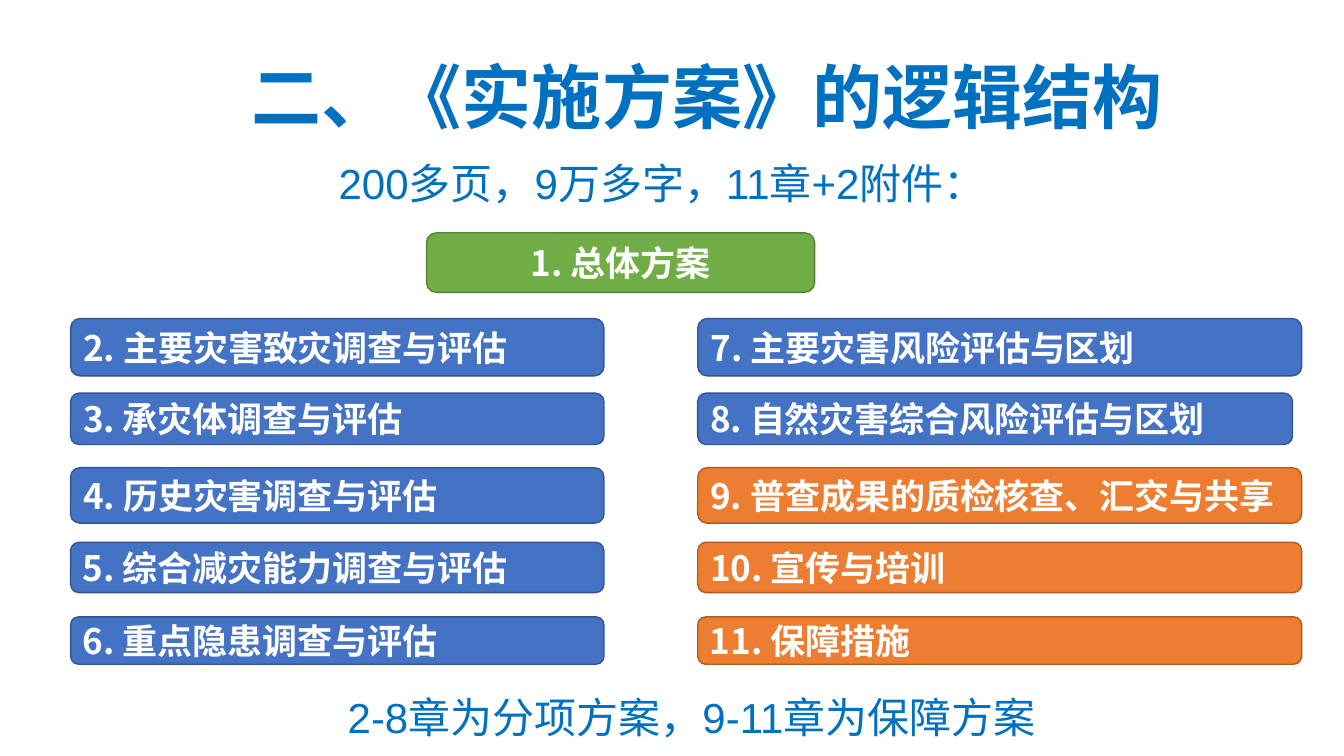
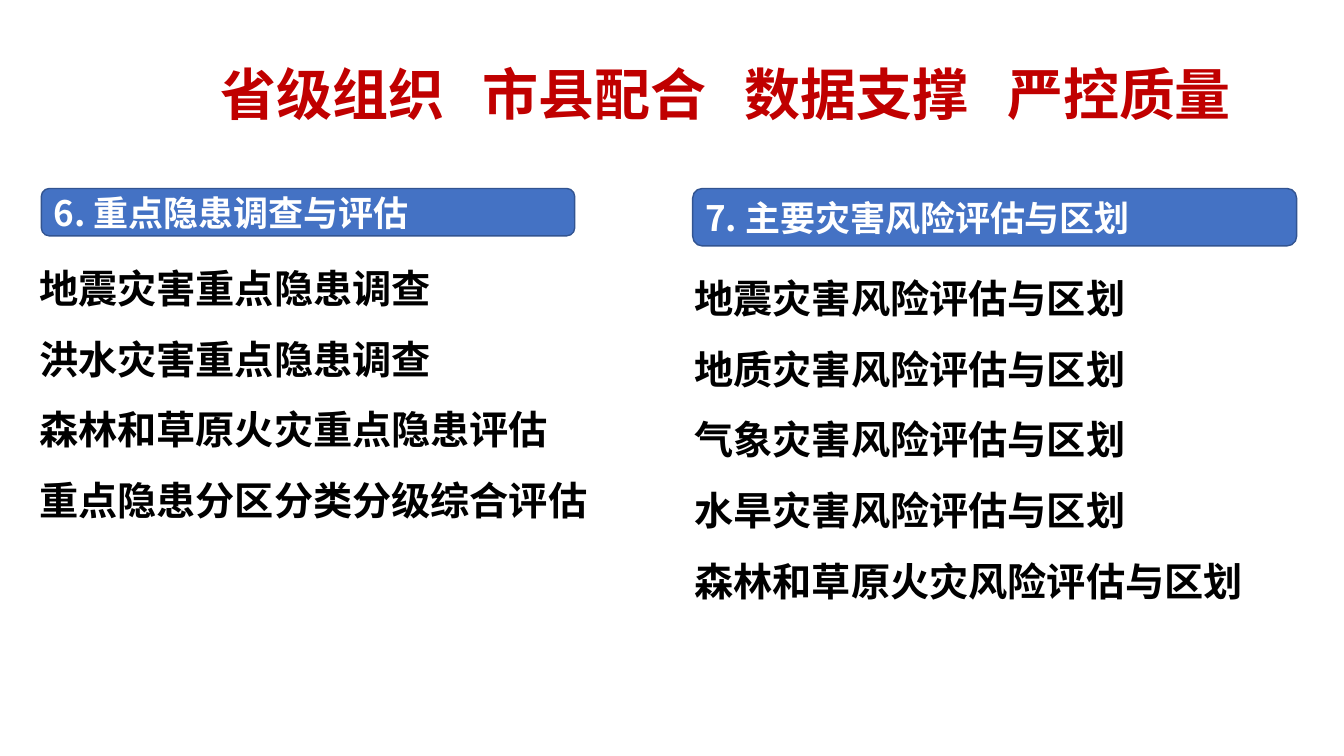
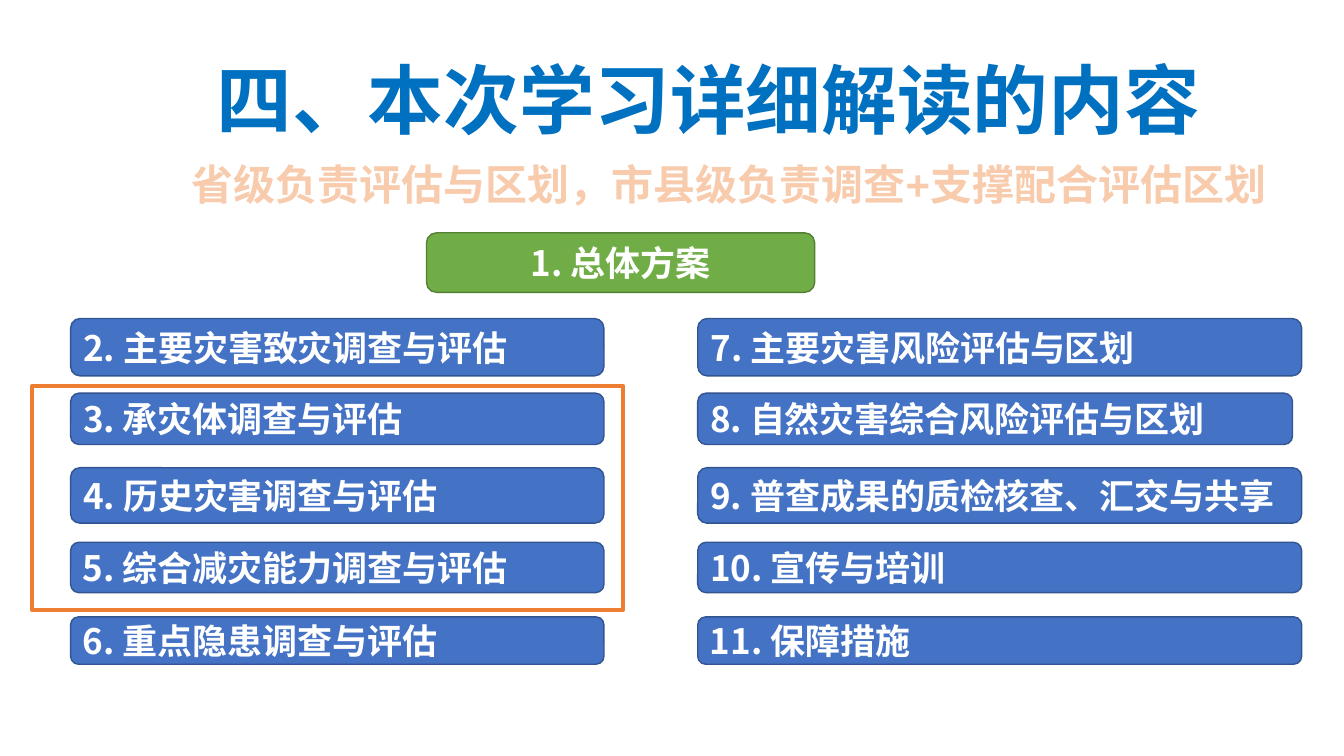
from pptx import Presentation
from pptx.dml.color import RGBColor
from pptx.enum.shapes import MSO_SHAPE
from pptx.enum.text import MSO_ANCHOR, PP_ALIGN
from pptx.oxml.ns import qn
from pptx.util import Inches, Pt
from lxml.etree import SubElement

WHITE = RGBColor(0xFF, 0xFF, 0xFF)
BLACK = RGBColor(0x00, 0x00, 0x00)
TITLE_BLUE = RGBColor(0x00, 0x70, 0xC0)
TITLE_RED = RGBColor(0xC0, 0x00, 0x00)
PEACH = RGBColor(0xF8, 0xCB, 0xAD)
ORANGE = RGBColor(0xED, 0x7D, 0x31)
# Fill and line of each kind of bar
GREEN_BAR = (RGBColor(0x70, 0xAD, 0x47), RGBColor(0x53, 0x80, 0x35))
BLUE_BAR = (RGBColor(0x44, 0x72, 0xC4), RGBColor(0x32, 0x54, 0x91))
ORANGE_BAR = (ORANGE, RGBColor(0xAF, 0x5C, 0x24))

LATIN_FONT, CHINESE_FONT = "Arial", "Noto Sans CJK SC"

OVERALL_PLAN = "1. 总体方案"
SURVEY_CHAPTERS = [
    "2. 主要灾害致灾调查与评估",
    "3. 承灾体调查与评估",
    "4. 历史灾害调查与评估",
    "5. 综合减灾能力调查与评估",
    "6. 重点隐患调查与评估",
]
RISK_CHAPTERS = [
    "7. 主要灾害风险评估与区划",
    "8. 自然灾害综合风险评估与区划",
    "9. 普查成果的质检核查、汇交与共享",
    "10. 宣传与培训",
    "11. 保障措施",
]
HAZARD_SURVEYS = [
    "地震灾害重点隐患调查",
    "洪水灾害重点隐患调查",
    "森林和草原火灾重点隐患评估",
    "重点隐患分区分类分级综合评估",
]
RISK_ASSESSMENTS = [
    "地震灾害风险评估与区划",
    "地质灾害风险评估与区划",
    "气象灾害风险评估与区划",
    "水旱灾害风险评估与区划",
    "森林和草原火灾风险评估与区划",
]
SLOGANS = ["省级组织", "市县配合", "数据支撑", "严控质量"]
SLOGAN_PITCH = 2.6

FIRST_ROW, ROW_PITCH = 3.16, 0.74
ROW_HEIGHTS = [0.57, 0.51, 0.55, 0.5, 0.47]
SURVEY_LEFT, SURVEY_WIDTHS = 0.7, [5.29] * 5
RISK_LEFT, RISK_WIDTHS = 6.92, [5.99, 5.9, 5.99, 5.99, 5.99]


def add_span(para, text, size, color, bold, latin=LATIN_FONT):
    span = para.add_run()
    span.text = text
    for name, value in {"size": Pt(size), "bold": bold, "name": latin}.items():
        setattr(span.font, name, value)
    span.font.color.rgb = color
    SubElement(span.font._element, qn("a:ea"), typeface=CHINESE_FONT)
    return span


def add_text(page, place, lines, size, color, bold=False, spacing=None):
    box = page.shapes.add_textbox(*map(Inches, place))
    frame = box.text_frame
    frame.word_wrap = True
    for index, line in enumerate(lines):
        para = frame.add_paragraph() if index else frame.paragraphs[0]
        para.line_spacing = spacing
        add_span(para, line, size, color, bold)
    return frame.paragraphs[0]


def add_bar(page, place, text, colors, align=PP_ALIGN.LEFT):
    bar = page.shapes.add_shape(MSO_SHAPE.ROUNDED_RECTANGLE, *map(Inches, place))
    bar.shadow.inherit = False
    bar.fill.solid()
    bar.fill.fore_color.rgb, bar.line.color.rgb = colors
    bar.line.width = Pt(1)
    frame = bar.text_frame
    frame.word_wrap = True
    frame.vertical_anchor = MSO_ANCHOR.MIDDLE
    frame.paragraphs[0].alignment = align
    add_span(frame.paragraphs[0], text, 25, WHITE, True, CHINESE_FONT)


def add_column(page, left, widths, chapters, colors):
    for row, (text, width, height, pair) in enumerate(
            zip(chapters, widths, ROW_HEIGHTS, colors)):
        add_bar(page, (left, FIRST_ROW + row * ROW_PITCH, width, height), text, pair)


def add_chapter_map(page, risk_colors):
    """Overall plan on top, the other ten chapters in two columns below."""
    add_bar(page, (4.23, 2.31, 3.85, 0.59), OVERALL_PLAN, GREEN_BAR, PP_ALIGN.CENTER)
    add_column(page, SURVEY_LEFT, SURVEY_WIDTHS, SURVEY_CHAPTERS, [BLUE_BAR] * 5)
    add_column(page, RISK_LEFT, RISK_WIDTHS, RISK_CHAPTERS, risk_colors)


def outline_text(para, color, width):
    properties = para.runs[0].font._element
    line = SubElement(properties, qn("a:ln"), w=str(Pt(width)))
    fill = SubElement(line, qn("a:solidFill"))
    SubElement(fill, qn("a:srgbClr"), val=str(color))
    properties.insert(0, line)


def set_tabs(para, stops):
    tabs = SubElement(para._p.get_or_add_pPr(), qn("a:tabLst"))
    for stop in stops:
        SubElement(tabs, qn("a:tab"), pos=str(Inches(stop)), algn="l")


def build_structure(page):
    add_text(page, (2.4, 0.48, 9.32, 0.94), ["二、《实施方案》的逻辑结构"],
             50, TITLE_BLUE, True)
    add_text(page, (3.26, 1.51, 7.54, 0.61), ["200多页，9万多字，11章+2附件："],
             30, TITLE_BLUE)
    add_chapter_map(page, [BLUE_BAR] * 2 + [ORANGE_BAR] * 3)
    add_text(page, (3.35, 6.81, 7.54, 0.61), ["2-8章为分项方案，9-11章为保障方案"],
             30, TITLE_BLUE)


def build_division(page):
    add_bar(page, (0.41, 1.87, 5.29, 0.47), SURVEY_CHAPTERS[-1], BLUE_BAR)
    add_text(page, (0.29, 2.34, 5.96, 2.93), HAZARD_SURVEYS, 28, BLACK, True, 1.5)
    add_bar(page, (6.87, 1.87, 5.99, 0.57), RISK_CHAPTERS[0], BLUE_BAR)
    add_text(page, (6.79, 2.44, 6.07, 3.64), RISK_ASSESSMENTS, 28, BLACK, True, 1.5)
    title = add_text(page, (2.09, 0.54, 10.58, 0.77), ["\t".join(SLOGANS)],
                     40, TITLE_RED, True)
    set_tabs(title, [SLOGAN_PITCH * step for step in range(1, len(SLOGANS))])


def build_contents(page):
    add_text(page, (2.05, 0.48, 10.05, 1.01), ["四、本次学习详细解读的内容"],
             54, TITLE_BLUE, True)
    duties = add_text(page, (1.8, 1.52, 11.11, 0.61),
                      ["省级负责评估与区划，市县级负责调查+支撑配合评估区划"],
                      30, PEACH, True)
    outline_text(duties, ORANGE, 1.75)
    add_chapter_map(page, [BLUE_BAR] * 5)
    highlight = page.shapes.add_shape(
        MSO_SHAPE.RECTANGLE, *map(Inches, (0.32, 3.83, 5.86, 2.22)))
    highlight.shadow.inherit = False
    highlight.fill.background()
    highlight.line.color.rgb = ORANGE
    highlight.line.width = Pt(3)


def main():
    deck = Presentation()
    deck.slide_width, deck.slide_height = Inches(13.33), Inches(7.5)
    for build in (build_structure, build_division, build_contents):
        build(deck.slides.add_slide(deck.slide_layouts[6]))
    deck.save("out.pptx")


if __name__ == "__main__":
    main()
